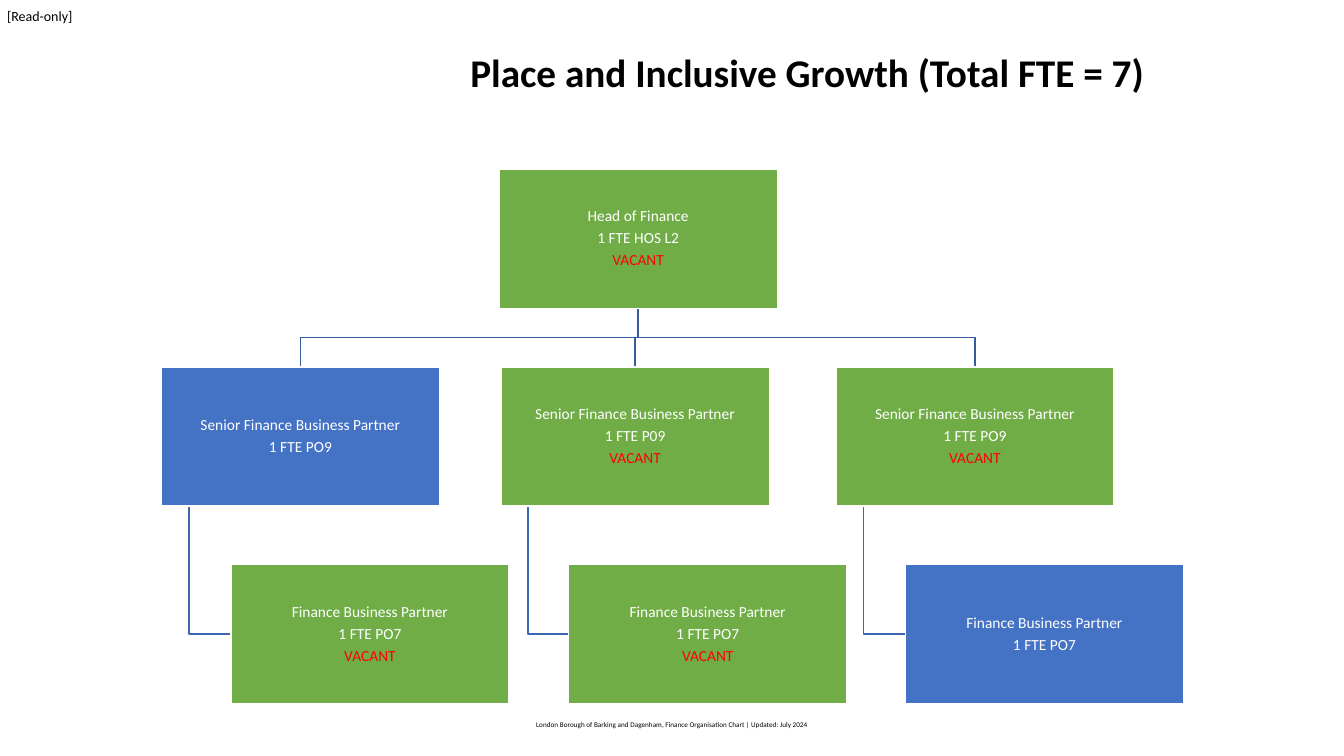
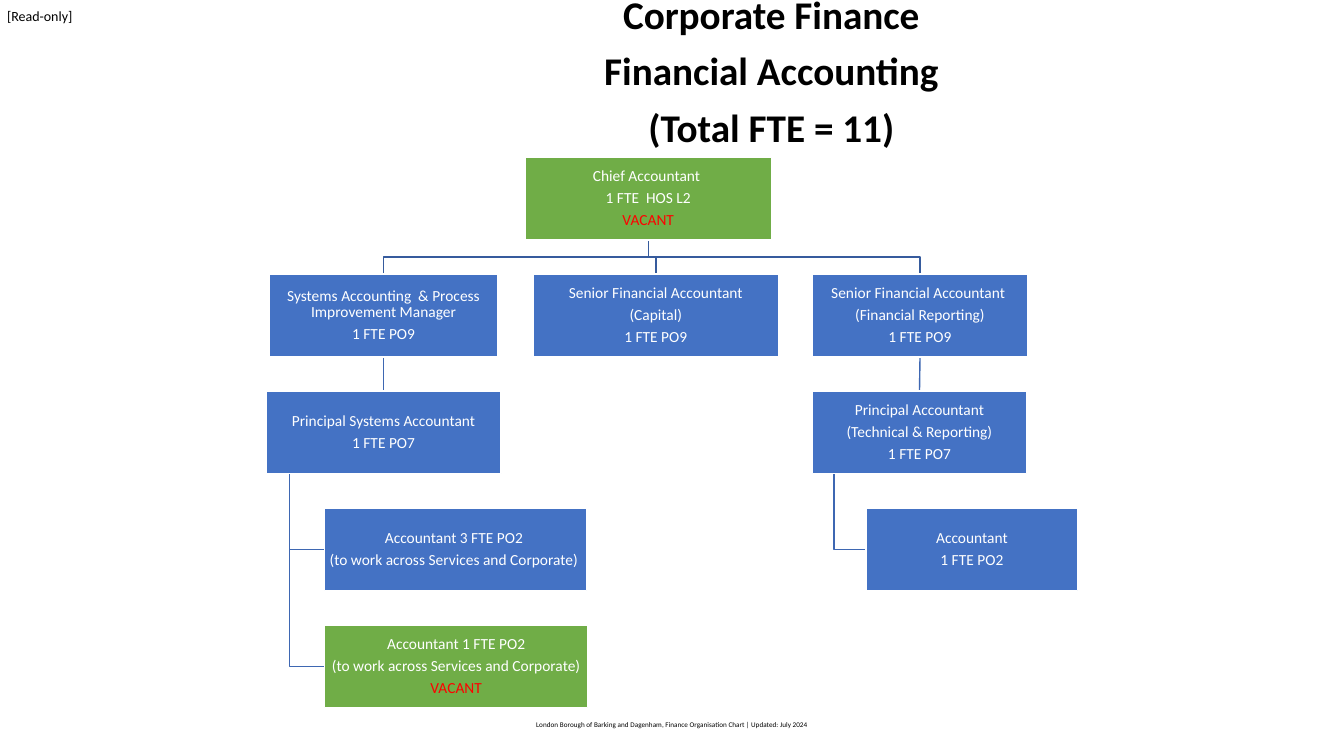
from dataclasses import dataclass
from enum import Enum

from lxml.etree import SubElement
from pptx import Presentation
from pptx.dml.color import RGBColor
from pptx.enum.shapes import MSO_CONNECTOR, MSO_SHAPE
from pptx.enum.text import MSO_ANCHOR, MSO_AUTO_SIZE, PP_ALIGN
from pptx.oxml.ns import qn
from pptx.util import Inches, Pt

FONT = "Calibri"
COLORS = {
    "text": "000000",
    "filled": "4472C4",
    "vacant": "70AD47",
    "label": "FFFFFF",
    "alert": "FF0000",
    "top_link": "365B9D",
    "link": "3E67B2",
}


class Link(Enum):
    TREE = "tree"          # from the manager's bottom, across, to the top
    STRAIGHT = "straight"  # directly down
    HANGING = "hanging"    # down near the manager's left edge, then right


@dataclass(frozen=True)
class Post:
    left: float
    width: float
    row: int
    lines: tuple[str, ...]
    vacant: bool = False
    link: Link = Link.TREE
    reports: tuple["Post", ...] = ()


@dataclass(frozen=True)
class Chart:
    title: tuple[str, ...]
    title_box: tuple[float, float, float, float]
    top: float
    row_pitch: float
    box_height: float
    head: Post


def color(name: str) -> RGBColor:
    return RGBColor.from_string(COLORS[name])


def set_margins(frame, margin: float) -> None:
    frame.margin_left = frame.margin_right = Inches(margin)
    frame.margin_top = frame.margin_bottom = Inches(margin)


def set_font(paragraph, size: float, color_name: str, bold: bool = False) -> None:
    font = paragraph.font
    font.name, font.size, font.bold = FONT, Pt(size), bold
    font.color.rgb = color(color_name)


def add_layout_text(slide, number: int, text: str, box, size: float,
                    margin: float, centred: bool) -> None:
    """Put a fixed text on the layout that the slides share."""
    shape = slide.shapes.add_textbox(*map(Inches, box))
    frame = shape.text_frame
    frame.word_wrap = centred
    set_margins(frame, margin)
    frame.text = text
    paragraph = frame.paragraphs[0]
    if centred:
        frame.vertical_anchor = MSO_ANCHOR.MIDDLE
        paragraph.alignment = PP_ALIGN.CENTER
        paragraph.space_after = Pt(3)
    set_font(paragraph, size, "text")
    shape.element.nvSpPr.cNvPr.set("id", str(100 + number))
    slide.slide_layout.shapes.element.append(shape.element)


def set_title(slide, chart: Chart) -> None:
    title = slide.shapes.title
    title.left, title.top, title.width, title.height = map(Inches, chart.title_box)
    frame = title.text_frame
    frame.text = "\n".join(chart.title)
    frame.word_wrap = True
    frame.auto_size = MSO_AUTO_SIZE.NONE
    frame.vertical_anchor = MSO_ANCHOR.MIDDLE
    set_margins(frame, 0.2)
    for index, paragraph in enumerate(frame.paragraphs):
        paragraph.alignment = PP_ALIGN.CENTER
        paragraph.line_spacing = 0.9
        paragraph.space_before = Pt(10 if index else 0)
        set_font(paragraph, 28, "text", bold=True)


def add_box(slide, chart: Chart, post: Post):
    box = slide.shapes.add_shape(
        MSO_SHAPE.RECTANGLE, Inches(post.left),
        Inches(chart.top + post.row * chart.row_pitch),
        Inches(post.width), Inches(chart.box_height))
    box.shadow.inherit = False
    box.fill.solid()
    box.fill.fore_color.rgb = color("vacant" if post.vacant else "filled")
    box.line.color.rgb = color("label")
    box.line.width = Pt(1)

    frame = box.text_frame
    frame.word_wrap = True
    frame.vertical_anchor = MSO_ANCHOR.MIDDLE
    set_margins(frame, 0.01)
    frame.text = "\n".join(post.lines + (("VACANT",) if post.vacant else ()))
    for index, paragraph in enumerate(frame.paragraphs):
        paragraph.alignment = PP_ALIGN.CENTER
        paragraph.line_spacing = 0.9
        paragraph.space_after = Pt(3.85)
        set_font(paragraph, 11, "label" if index < len(post.lines) else "alert")
    return box


def add_link(slide, manager, report, link: Link) -> None:
    bottom = manager.top + manager.height
    if link is Link.STRAIGHT:
        line = slide.shapes.add_connector(MSO_CONNECTOR.STRAIGHT, 0, 0, 0, 0)
        line.begin_connect(manager, 2)
        line.end_connect(report, 0)
        SubElement(line.element.spPr, qn("a:effectLst"))
    else:
        if link is Link.TREE:
            start = manager.left + manager.width // 2
            end = report.left + report.width // 2
            middle = (bottom + report.top) // 2
            points = [(start, middle), (end, middle), (end, report.top)]
        else:
            start = manager.left + manager.width // 10
            middle = report.top + report.height // 2
            points = [(start, middle), (report.left, middle)]
        builder = slide.shapes.build_freeform(start, bottom)
        builder.add_line_segments(points, close=False)
        line = builder.convert_to_shape()
        line.fill.background()
        line.shadow.inherit = False
    line.line.color.rgb = color("top_link" if link is Link.TREE else "link")
    line.line.width = Pt(1)
    # Links lie behind the boxes
    slide.shapes.element.insert(2, line.element)


def add_post(slide, chart: Chart, post: Post, manager=None) -> None:
    box = add_box(slide, chart, post)
    if manager is not None:
        add_link(slide, manager, box, post.link)
    for report in post.reports:
        add_post(slide, chart, report, box)


# Posts that repeat with other places
SENIOR = "Senior Finance Business Partner"


def partner(left: float, vacant: bool) -> Post:
    return Post(left, 2.76, 2, ("Finance Business Partner", "1 FTE PO7"),
                vacant, Link.HANGING)


GROWTH = Chart(
    ("Place and Inclusive Growth (Total FTE = 7)",),
    (2.83, 0.09, 10.35, 1.3), 1.68, 1.96, 1.38,
    Post(4.95, 2.76, 0, ("Head of Finance", "1 FTE HOS L2"), True, reports=(
        Post(1.6, 2.76, 1, (SENIOR, "1 FTE PO9"),
             reports=(partner(2.29, True),)),
        Post(4.97, 2.66, 1, (SENIOR, "1 FTE P09"), True,
             reports=(partner(5.64, True),)),
        Post(8.29, 2.76, 1, (SENIOR, "1 FTE PO9"), True,
             reports=(partner(8.98, False),)),
    )))

ACCOUNTING = Chart(
    ("Corporate Finance", "Financial Accounting", "(Total FTE = 11)"),
    (2.85, 0, 9.6, 1.45), 1.56, 1.16, 0.82,
    Post(5.21, 2.44, 0, ("Chief Accountant ", "1 FTE  HOS L2"), True, reports=(
        Post(2.67, 2.27, 1,
             ("Systems Accounting  & Process Improvement Manager", "1 FTE PO9"),
             reports=(
                 Post(2.64, 2.33, 2, ("Principal Systems Accountant", "1 FTE PO7"),
                      link=Link.STRAIGHT, reports=(
                          Post(3.22, 2.6, 3,
                               ("Accountant 3 FTE PO2 ",
                                "(to work across Services and Corporate) "),
                               link=Link.HANGING),
                          Post(3.22, 2.61, 4,
                               ("Accountant 1 FTE PO2",
                                "(to work across Services and Corporate)"),
                               True, Link.HANGING),
                      )),
             )),
        Post(5.29, 2.43, 1,
             ("Senior Financial Accountant", "(Capital)", "1 FTE PO9")),
        Post(8.06, 2.13, 1,
             ("Senior Financial Accountant ", "(Financial Reporting)", "1 FTE PO9"),
             reports=(
                 Post(8.06, 2.12, 2,
                      ("Principal Accountant", "(Technical & Reporting)", "1 FTE PO7"),
                      link=Link.STRAIGHT, reports=(
                          Post(8.59, 2.1, 3, ("Accountant", "1 FTE PO2"),
                               link=Link.HANGING),
                      )),
             )),
    )))


def main() -> None:
    presentation = Presentation()
    presentation.slide_width = Inches(13.33)
    presentation.slide_height = Inches(7.5)
    layout = presentation.slide_layouts.get_by_name("Title Only")

    for chart in (GROWTH, ACCOUNTING):
        slide = presentation.slides.add_slide(layout)
        set_title(slide, chart)
        add_post(slide, chart, chart.head)

    # Marking and footer, shared through the layout
    add_layout_text(slide, 1, "[Read-only]", (0.07, 0.07, 0.68, 0.17), 10, 0, False)
    add_layout_text(
        slide, 2,
        "London Borough of Barking and Dagenham, Finance Organisation Chart"
        " | Updated: July 2024",
        (0, 6.87, 13.33, 0.63), 5.1, 0.05, True)

    presentation.save("out.pptx")


if __name__ == "__main__":
    main()
